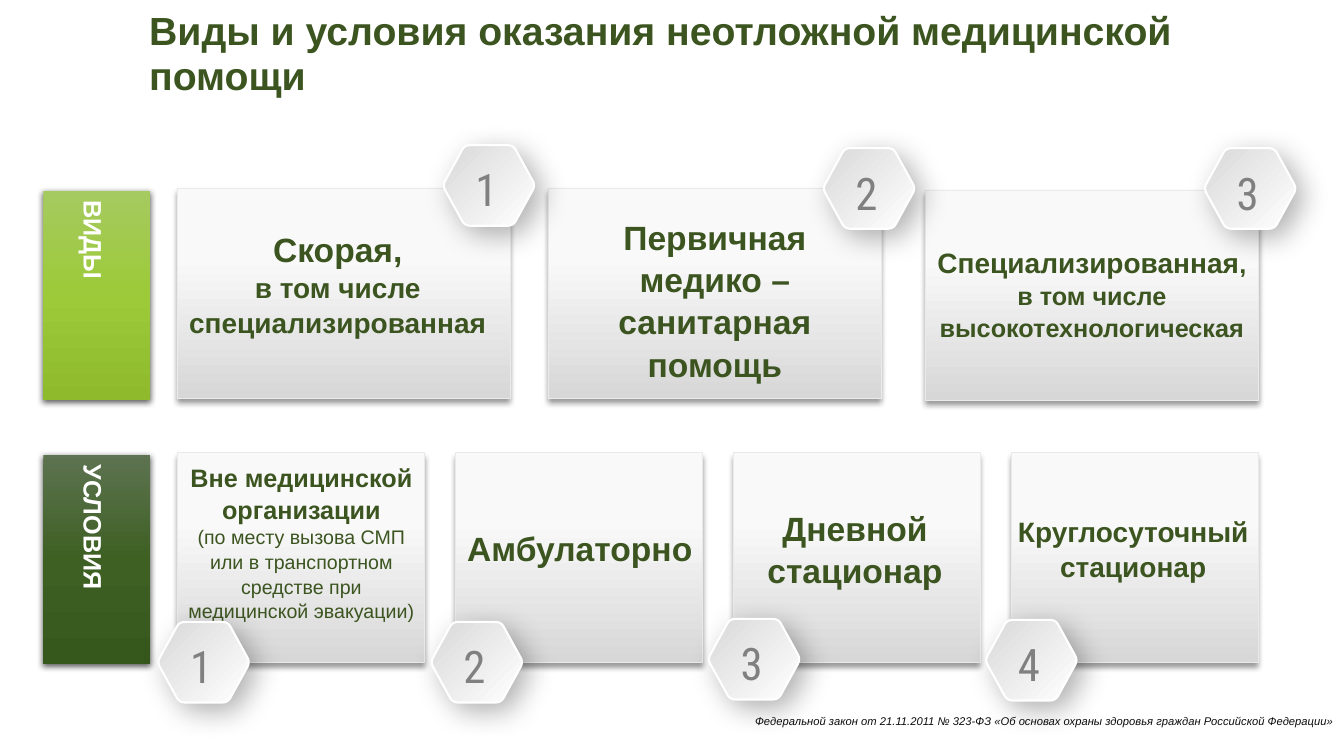
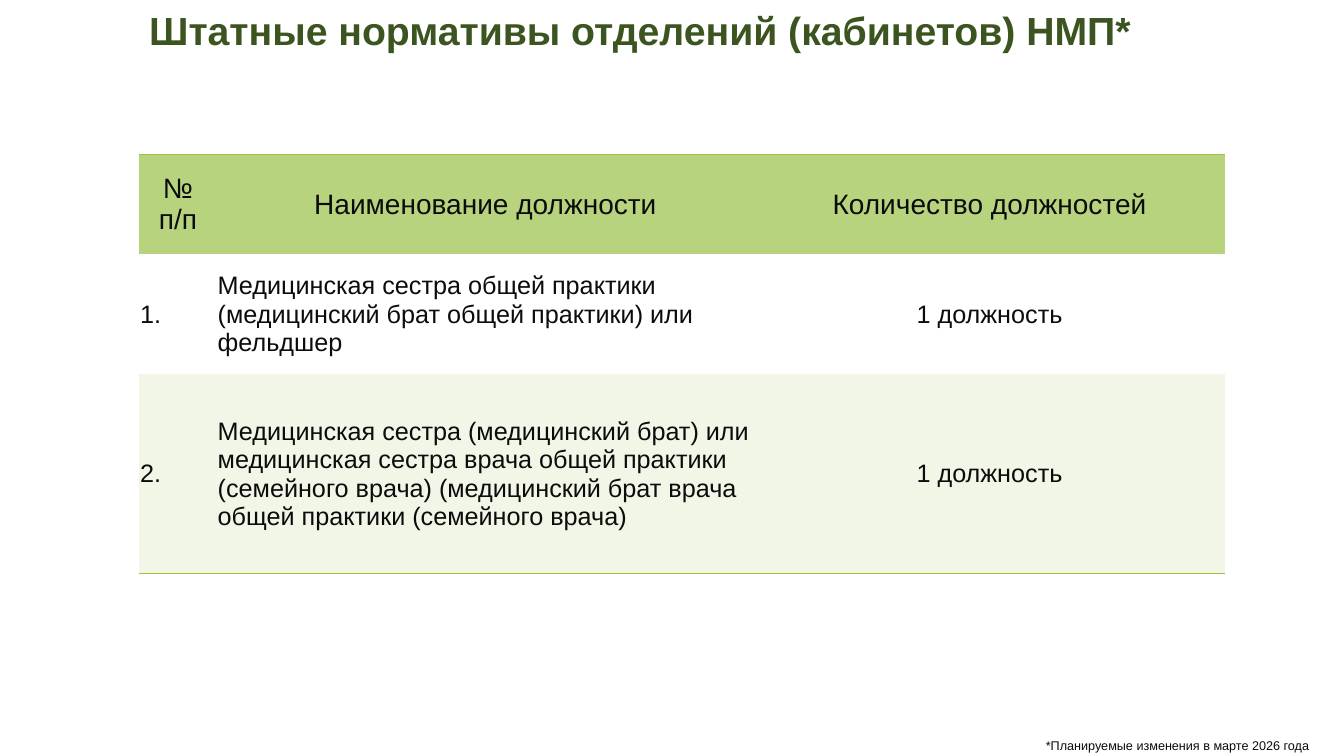
"""Build two slides on the types, conditions and staffing of urgent medical care."""
from lxml.etree import SubElement
from pptx import Presentation
from pptx.dml.color import RGBColor
from pptx.enum.shapes import MSO_SHAPE
from pptx.enum.text import MSO_ANCHOR, MSO_AUTO_SIZE, PP_ALIGN
from pptx.oxml.ns import qn
from pptx.util import Inches, Pt

COLORS = {
    "green": "3C5520", "text": "0C0C0C", "number": "808080", "white": "FFFFFF",
    "card_edge": "EAEAEA", "header": "B7D37E", "band": "F1F6E6", "rule": "9AC340",
    "shadow": "000000",
}
GRADIENTS = {
    "card": [(33, "F9F9F9"), (100, "D7D7D7")],
    "lime": [(0, "A5CA5F"), (50, "9CCA39"), (100, "8EBA2C")],
    "forest": [(0, "5D7351"), (50, "3E6023"), (100, "36581D")],
    "badge": [(0, "D9D9D9"), (100, "FFFFFF")],
}
NO_TABLE_STYLE = "{2D5ABB26-0587-4C30-8999-92F81FD0307C}"
HEXAGON = [(-0.01, 0.4), (0.21, 0), (0.69, 0), (0.91, 0.4), (0.69, 0.8), (0.21, 0.8)]
CORNER_CUT = 0.12
CORNER_STEPS = 6


def between(start, end, share):
    return tuple(a + (b - a) * share for a, b in zip(start, end))


def rounded_outline(corners):
    outline = []
    for index, corner in enumerate(corners):
        start = between(corner, corners[index - 1], CORNER_CUT)
        end = between(corner, corners[(index + 1) % len(corners)], CORNER_CUT)
        for step in range(CORNER_STEPS + 1):
            share = step / CORNER_STEPS
            outline.append(between(between(start, corner, share),
                                   between(corner, end, share), share))
    return outline


class Deck:
    def __init__(self):
        self.presentation = Presentation()
        self.presentation.slide_width = Inches(13.33)
        self.presentation.slide_height = Inches(7.5)
        self.slide = None

    def style(self, run, size, color="green", bold=False, italic=False, font="Arial"):
        run.font.name = font
        run.font.size = Pt(size)
        run.font.bold = bold
        run.font.italic = italic
        run.font.color.rgb = RGBColor.from_string(COLORS[color])

    def start(self, heading):
        self.slide = self.presentation.slides.add_slide(self.presentation.slide_layouts[5])
        title = self.slide.shapes.title
        title.left, title.top = Inches(1.38), Inches(0.05)
        title.width, title.height = Inches(11.96), Inches(1.09)
        frame = title.text_frame
        frame.text = heading
        frame.auto_size = MSO_AUTO_SIZE.NONE
        frame.vertical_anchor = MSO_ANCHOR.TOP
        paragraph = frame.paragraphs[0]
        paragraph.alignment = PP_ALIGN.LEFT
        paragraph.line_spacing = 0.95
        self.style(paragraph.runs[0], 28, bold=True)

    def paint(self, shape, gradient, angle):
        shape.fill.gradient()
        shape.fill.gradient_angle = 360 - angle
        stops = shape._element.spPr.find(qn("a:gradFill")).find(qn("a:gsLst"))
        stops.clear()
        for position, color in GRADIENTS[gradient]:
            stop = SubElement(stops, qn("a:gs"), pos=str(position * 1000))
            SubElement(stop, qn("a:srgbClr"), val=color)

    def cast_shadow(self, shape, opacity, blur, distance, angle):
        shape.shadow.inherit = False
        effects = shape._element.spPr.find(qn("a:effectLst"))
        shadow = SubElement(effects, qn("a:outerShdw"), blurRad=str(Pt(blur)),
                            dist=str(Pt(distance)), dir=str(angle * 60000),
                            algn="ctr", rotWithShape="0")
        color = SubElement(shadow, qn("a:srgbClr"), val=COLORS["shadow"])
        SubElement(color, qn("a:alpha"), val=str(opacity * 1000))

    def outline(self, shape, color, width):
        shape.line.color.rgb = RGBColor.from_string(COLORS[color])
        shape.line.width = Pt(width)

    def panel(self, left, top, width, gradient):
        panel = self.slide.shapes.add_shape(
            MSO_SHAPE.RECTANGLE, Inches(left), Inches(top), Inches(width), Inches(2.08))
        self.paint(panel, gradient, 90)
        return panel

    def card(self, left, top, width):
        card = self.panel(left, top, width, "card")
        self.outline(card, "card_edge", 0.25)
        self.cast_shadow(card, 40, 4, 3, 90)

    def row_label(self, top, label, gradient):
        band = self.panel(0.43, top, 1.06, gradient)
        band.line.fill.background()
        self.cast_shadow(band, 63, 4.5, 1.5, 90)
        frame = band.text_frame
        frame.text = label
        frame.vertical_anchor = MSO_ANCHOR.MIDDLE
        frame._txBody.bodyPr.set("vert", "eaVert")
        paragraph = frame.paragraphs[0]
        paragraph.alignment = PP_ALIGN.CENTER
        paragraph.line_spacing = 1.2
        self.style(paragraph.runs[0], 18, "white", bold=True)

    def caption(self, left, top, width, height, paragraphs):
        frame = self.slide.shapes.add_textbox(
            Inches(left), Inches(top), Inches(width), Inches(height)).text_frame
        frame.word_wrap = True
        for index, pieces in enumerate(paragraphs):
            paragraph = frame.add_paragraph() if index else frame.paragraphs[0]
            paragraph.alignment = PP_ALIGN.CENTER
            paragraph.line_spacing = 1.05
            for text, size, bold in pieces:
                run = paragraph.add_run()
                run.text = text
                self.style(run, size, bold=bold)

    def badge(self, left, top, number):
        group = self.slide.shapes.add_group_shape()
        points = [(Inches(left + x), Inches(top + y)) for x, y in rounded_outline(HEXAGON)]
        builder = group.shapes.build_freeform(*points[0], scale=1.0)
        builder.add_line_segments(points[1:], close=True)
        hexagon = builder.convert_to_shape()
        self.paint(hexagon, "badge", 45)
        self.outline(hexagon, "white", 1.5)
        self.cast_shadow(hexagon, 30, 20, 8, 45)
        frame = group.shapes.add_textbox(
            Inches(left - 0.11), Inches(top + 0.12), Inches(1.07), Inches(0.64)).text_frame
        frame.text = str(number)
        frame.word_wrap = True
        frame.paragraphs[0].alignment = PP_ALIGN.CENTER
        self.style(frame.paragraphs[0].runs[0], 32, "number", font="Roboto Condensed")

    def footnote(self, left, top, width, note, size, italic=False):
        frame = self.slide.shapes.add_textbox(
            Inches(left), Inches(top), Inches(width), Inches(0.24)).text_frame
        frame.text = note
        frame.word_wrap = True
        frame.paragraphs[0].alignment = PP_ALIGN.RIGHT
        self.style(frame.paragraphs[0].runs[0], size, "text", italic=italic)

    def rule(self, cell, side):
        properties = cell._tc.get_or_add_tcPr()
        line = SubElement(properties, qn(side), w=str(Pt(1)))
        fill = SubElement(line, qn("a:solidFill"))
        SubElement(fill, qn("a:srgbClr"), val=COLORS["rule"])
        properties.insert(0, line)

    def cell(self, cell, text, size, centered, fill, roomy):
        cell.text = text
        cell.vertical_anchor = MSO_ANCHOR.MIDDLE
        cell.margin_left = cell.margin_right = Inches(0.04 if roomy else 0.01)
        cell.margin_top = Inches(0.07 if roomy else 0.01)
        cell.margin_bottom = Inches(0.07 if roomy else 0)
        if fill:
            cell.fill.solid()
            cell.fill.fore_color.rgb = RGBColor.from_string(COLORS[fill])
        else:
            cell.fill.background()
        paragraph = cell.text_frame.paragraphs[0]
        paragraph.alignment = PP_ALIGN.CENTER if centered else PP_ALIGN.LEFT
        if roomy:
            paragraph.line_spacing = 1.07
        self.style(paragraph.runs[0], size, "text")

    def staffing_table(self, rows, widths, heights):
        table = self.slide.shapes.add_table(
            len(rows), len(widths), Inches(1.38), Inches(1.53),
            Inches(sum(widths)), Inches(sum(heights))).table
        table.first_row = table.horz_banding = False
        table._tbl.tblPr.find(qn("a:tableStyleId")).text = NO_TABLE_STYLE
        for column, width in zip(table.columns, widths):
            column.width = Inches(width)
        fills = ["header", None, "band"]
        for r, (texts, height) in enumerate(zip(rows, heights)):
            table.rows[r].height = Inches(height)
            for c, text in enumerate(texts):
                heading = r == 0
                self.cell(table.cell(r, c), text, 20 if heading else 18,
                          heading or c == 2, fills[r], heading and c > 0)
        for c in range(len(widths)):
            self.rule(table.cell(0, c), "a:lnT")
            self.rule(table.cell(len(rows) - 1, c), "a:lnB")


def main():
    deck = Deck()
    deck.start("Виды и условия оказания неотложной медицинской помощи")
    deck.row_label(1.89, "ВИДЫ", "lime")
    deck.row_label(4.51, "УСЛОВИЯ", "forest")
    for left, top in [(1.76, 1.87), (5.44, 1.87), (9.18, 1.89)]:
        deck.card(left, top, 3.3)
    for index in range(4):
        deck.card(1.76 + 2.755 * index, 4.49, 2.45)

    captions = [
        (1.7, 2.2, 3.3, 1.18, [[("Скорая,", 24, True)],
                               [("в том числе специализированная", 20, True)]]),
        (5.46, 2.08, 3.26, 1.72, [[("Первичная медико – санитарная помощь", 24, True)]]),
        (9.18, 2.37, 3.3, 1.04, [[("Специализированная", 20, True),
                                  (", в том числе высокотехнологическая", 18, True)]]),
        (1.74, 4.52, 2.5, 1.65, [
            [("Вне медицинской организации", 18, True)],
            [("(по месту вызова СМП или в транспортном средстве при "
              "медицинской эвакуации)", 14, False)]]),
        (4.52, 5.17, 2.46, 0.5, [[("Амбулаторно", 24, True)]]),
        (7.25, 4.97, 2.46, 0.91, [[("Дневной стационар", 24, True)]]),
        (9.76, 5.04, 2.96, 0.77, [[("Круглосуточный стационар", 20, True)]]),
    ]
    for caption in captions:
        deck.caption(*caption)

    badge_rows = [
        [(4.4, 1.44), (8.17, 1.47), (11.95, 1.47)],
        [(1.57, 6.17), (4.28, 6.17), (7.03, 6.14), (9.78, 6.15)],
    ]
    for badges in badge_rows:
        for number, (left, top) in enumerate(badges, 1):
            deck.badge(left, top, number)
    deck.footnote(6.69, 7.04, 6.64,
                  "Федеральной закон от 21.11.2011 № 323-ФЗ «Об основах охраны "
                  "здоровья граждан Российской Федерации»", 8, italic=True)

    deck.start("Штатные нормативы отделений (кабинетов) НМП*")
    deck.staffing_table([
        ["№ п/п", "Наименование должности", "Количество должностей"],
        ["1.", "Медицинская сестра общей практики (медицинский брат общей практики) "
               "или фельдшер", "1 должность"],
        ["2.", "Медицинская сестра (медицинский брат) или медицинская сестра врача "
               "общей практики (семейного врача) (медицинский брат врача общей "
               "практики (семейного врача)", "1 должность"],
    ], [0.77, 5.33, 4.67], [0.99, 1.19, 1.98])
    deck.footnote(3.89, 7.27, 9.19, "*Планируемые изменения в марте 2026 года", 9)
    deck.presentation.save("out.pptx")


if __name__ == "__main__":
    main()
